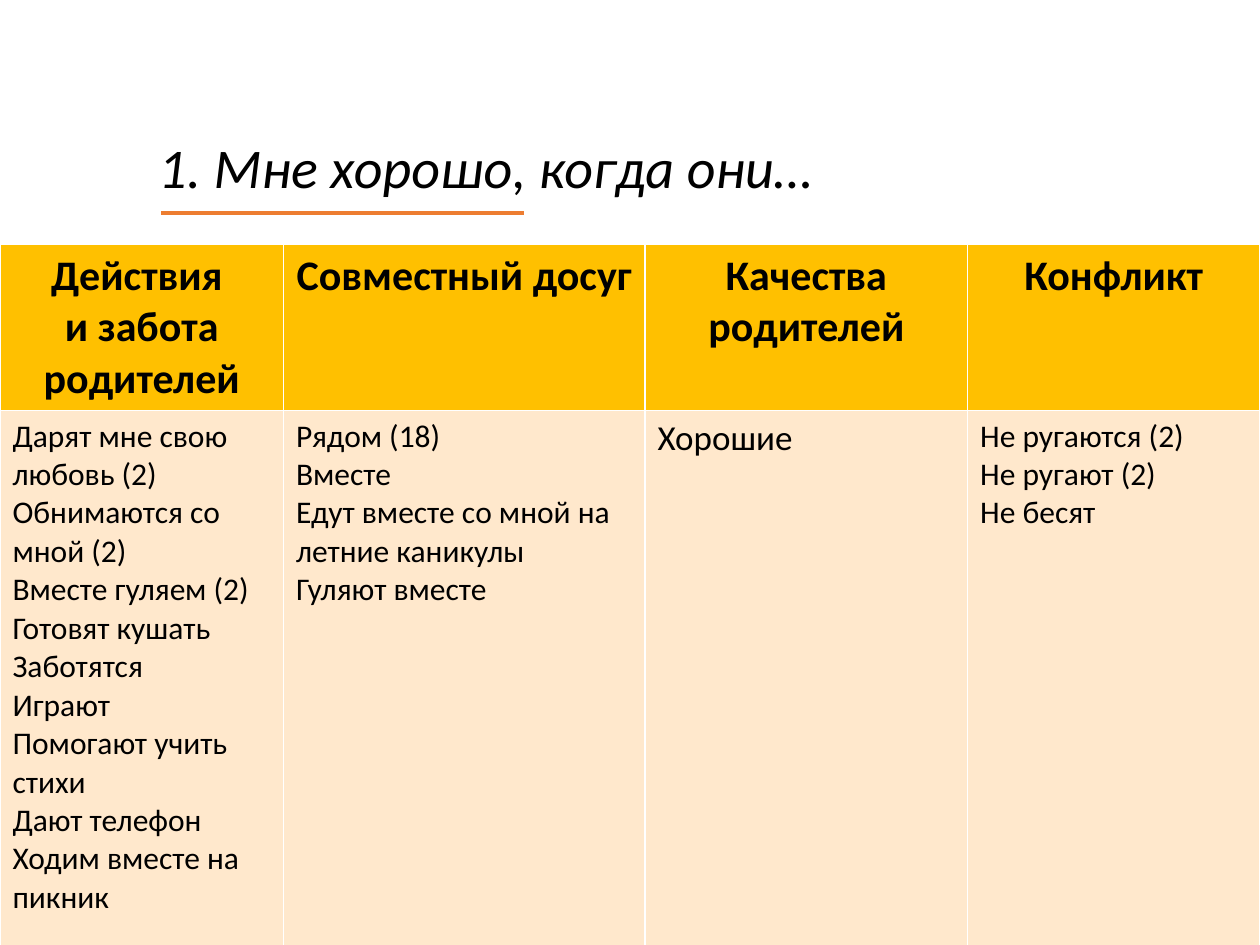
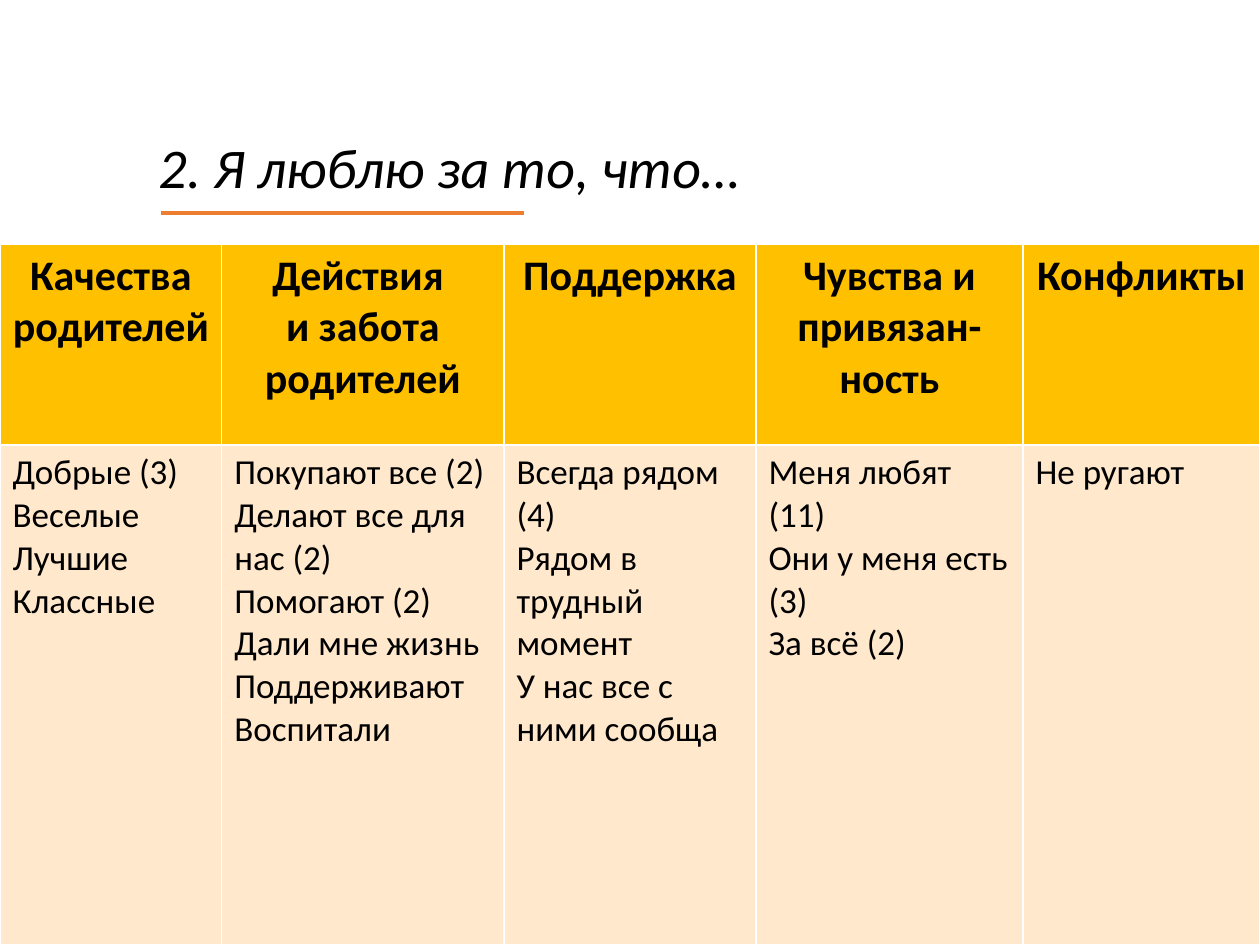
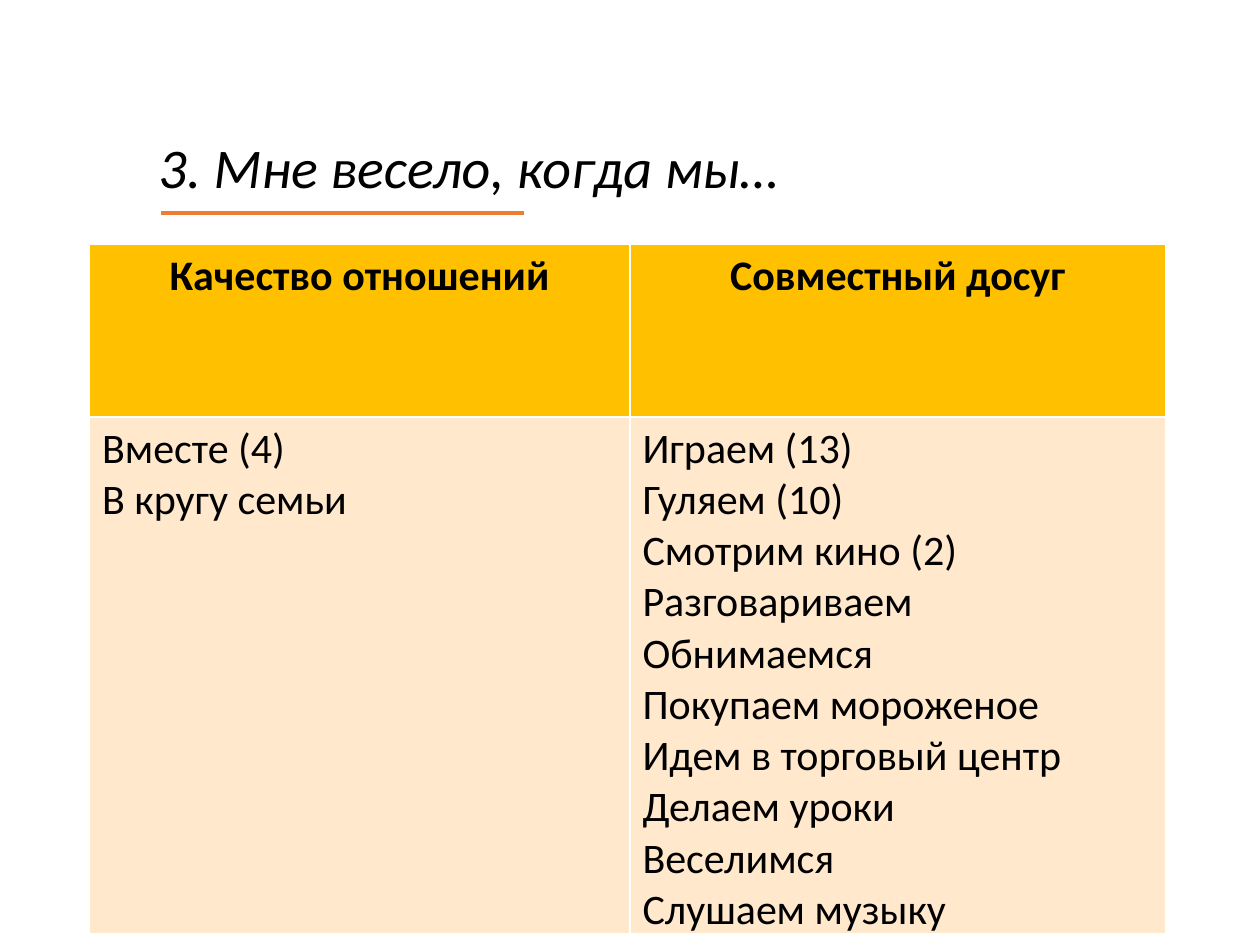
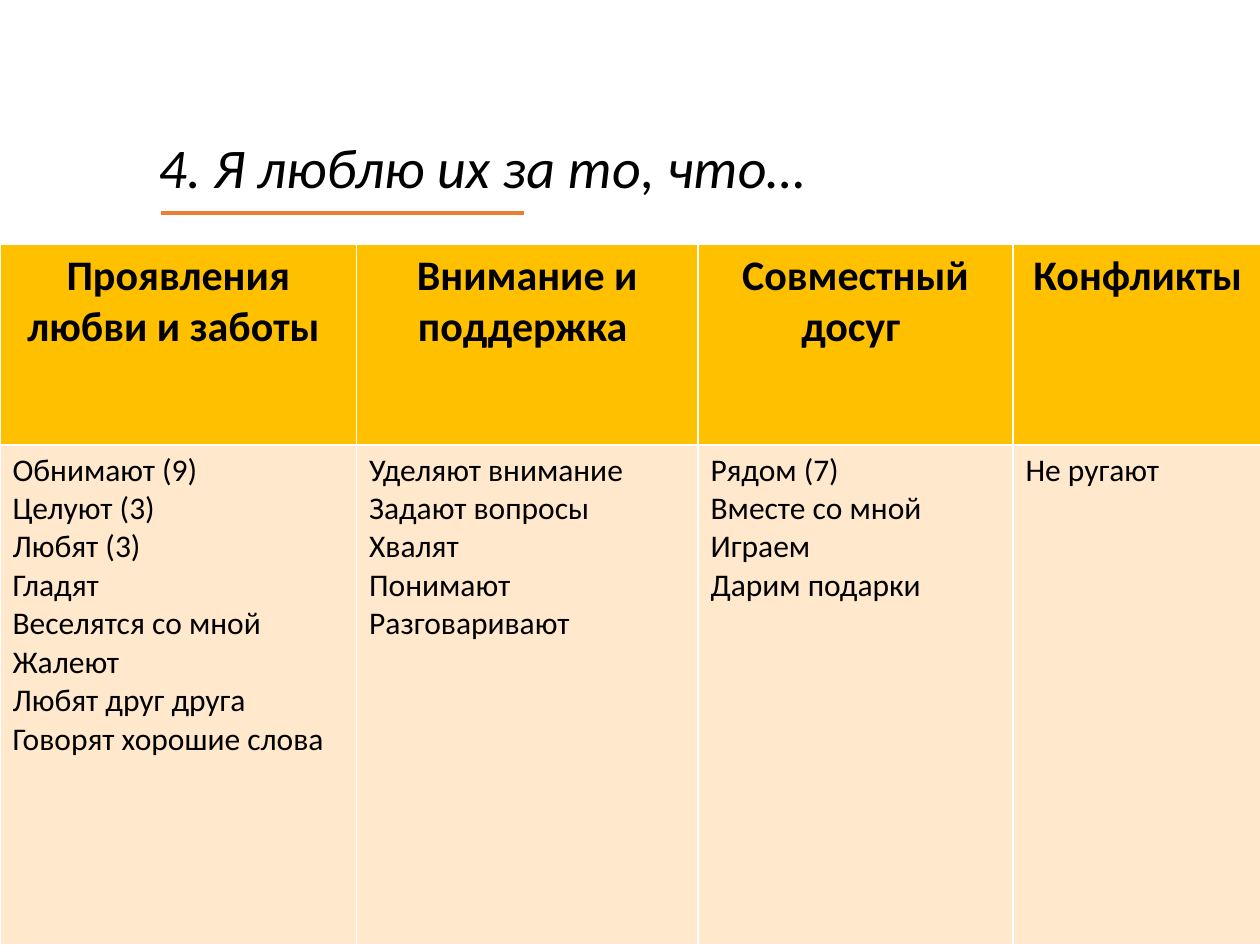
import pptx
import pptx.dml.color
import pptx.enum.shapes
import pptx.enum.text
import pptx.oxml.ns
import pptx.util
from lxml import etree

Inches = pptx.util.Inches
ALIGN = pptx.enum.text.PP_ALIGN

# Shared style
FONT = "Calibri"
TEXT = "000000"
ACCENT = "ED7D31"
HEADER_FILL = "FFC000"
BODY_FILL = "FFE8CC"
TABLE_TOP = 1.94

# Each column: width, header, answers, and optionally its own text size
SURVEY = [
    dict(
        question="1. Мне хорошо, когда они…",
        header_height=1.32, body_height=4.33, size=18,
        columns=[
            (2.25, "Действия \nи забота родителей",
             ["Дарят мне свою любовь (2)", "Обнимаются со мной (2)",
              "Вместе гуляем (2)", "Готовят кушать", "Заботятся", "Играют",
              "Помогают учить стихи", "Дают телефон",
              "Ходим вместе на пикник"]),
            (2.87, "Совместный досуг",
             ["Рядом (18)", "Вместе",
              "Едут вместе со мной на летние каникулы", "Гуляют вместе"]),
            (2.56, "Качества родителей", ["Хорошие"], 20),
            (2.32, "Конфликт",
             ["Не ругаются (2)", "Не ругают (2)", "Не бесят"]),
        ]),
    dict(
        question="2. Я люблю за то, что…",
        header_height=1.59, body_height=3.97, size=20,
        columns=[
            (1.76, "Качества родителей",
             ["Добрые (3)", "Веселые", "Лучшие", "Классные"]),
            (2.24, "Действия \nи забота родителей",
             ["Покупают все (2)", "Делают все для нас (2)", "Помогают (2)",
              "Дали мне жизнь", "Поддерживают", "Воспитали"]),
            (2, "Поддержка",
             ["Всегда рядом (4)", "Рядом в трудный момент",
              "У нас все с ними сообща"]),
            (2.12, "Чувства и привязан-ность",
             ["Меня любят (11)", "Они у меня есть (3)", "За всё (2)"]),
            (1.88, "Конфликты", ["Не ругают"]),
        ]),
    dict(
        question="3. Мне весело, когда мы…",
        header_height=1.37, body_height=4.1, size=24, left=0.71,
        columns=[
            (4.29, "Качество отношений", ["Вместе (4)", "В кругу семьи"]),
            (4.25, "Совместный досуг",
             ["Играем (13)", "Гуляем (10)", "Смотрим кино (2)",
              "Разговариваем", "Обнимаемся", "Покупаем мороженое",
              "Идем в торговый центр", "Делаем уроки", "Веселимся",
              "Слушаем музыку"]),
        ]),
    dict(
        question="4. Я люблю их за то, что…",
        header_height=1.59, body_height=3.97, size=18,
        columns=[
            (2.83, "Проявления любви и заботы ",
             ["Обнимают (9)", "Целуют (3)", "Любят (3)", "Гладят",
              "Веселятся со мной", "Жалеют", "Любят друг друга",
              "Говорят хорошие слова"]),
            (2.71, "Внимание и поддержка ",
             ["Уделяют внимание", "Задают вопросы", "Хвалят", "Понимают",
              "Разговаривают"]),
            (2.5, "Совместный досуг ",
             ["Рядом (7)", "Вместе со мной", "Играем", "Дарим подарки"]),
            (1.98, "Конфликты", ["Не ругают"]),
        ]),
]


def color(hex_string):
    return pptx.dml.color.RGBColor.from_string(hex_string)


def write(frame, lines, size, bold=False, italic=False, align=ALIGN.LEFT,
          spacing=None):
    """Write one paragraph per line; a newline inside one is a line break."""
    for index, line in enumerate(lines):
        paragraph = frame.add_paragraph() if index else frame.paragraphs[0]
        paragraph.text = line
        paragraph.alignment = align
        paragraph.line_spacing = spacing
        for run in paragraph.runs:
            run.font.name = FONT
            run.font.size = pptx.util.Pt(size)
            run.font.bold = bold
            run.font.italic = italic
            run.font.color.rgb = color(TEXT)


def add_title(slide, question):
    # Accent rule below the title
    rule = slide.shapes.add_connector(
        pptx.enum.shapes.MSO_CONNECTOR.STRAIGHT,
        Inches(1.28), Inches(1.69), Inches(4.16), Inches(1.69))
    rule.line.color.rgb = color(ACCENT)
    rule.line.width = pptx.util.Pt(2)
    etree.SubElement(rule._element.spPr, pptx.oxml.ns.qn("a:effectLst"))

    # Question
    title = slide.shapes.add_textbox(
        Inches(1.16), Inches(0.63), Inches(7.86), Inches(1.45))
    frame = title.text_frame
    frame.word_wrap = True
    frame.vertical_anchor = pptx.enum.text.MSO_ANCHOR.MIDDLE
    write(frame, [question], 32, italic=True, spacing=0.9)


def fill_cell(cell, fill, lines, size, **text_format):
    cell.fill.solid()
    cell.fill.fore_color.rgb = color(fill)
    write(cell.text_frame, lines, size, **text_format)


def add_answers(slide, columns, header_height, body_height, size, left=0):
    total_width = sum(column[0] for column in columns)
    answers = slide.shapes.add_table(
        2, len(columns), Inches(left), Inches(TABLE_TOP),
        Inches(total_width), Inches(header_height + body_height)).table
    # The table style supplies the white cell borders
    answers.horz_banding = False
    answers.rows[0].height = Inches(header_height)
    answers.rows[1].height = Inches(body_height)
    for index, (width, header, replies, *own_size) in enumerate(columns):
        answers.columns[index].width = Inches(width)
        fill_cell(answers.cell(0, index), HEADER_FILL, [header], 24,
                  bold=True, align=ALIGN.CENTER)
        fill_cell(answers.cell(1, index), BODY_FILL, replies,
                  own_size[0] if own_size else size)


def main():
    deck = pptx.Presentation()
    deck.slide_width = Inches(10)
    deck.slide_height = Inches(7.5)
    for entry in SURVEY:
        slide = deck.slides.add_slide(deck.slide_layouts[6])
        table_format = dict(entry)
        add_title(slide, table_format.pop("question"))
        add_answers(slide, **table_format)
    deck.save("out.pptx")


if __name__ == "__main__":
    main()
